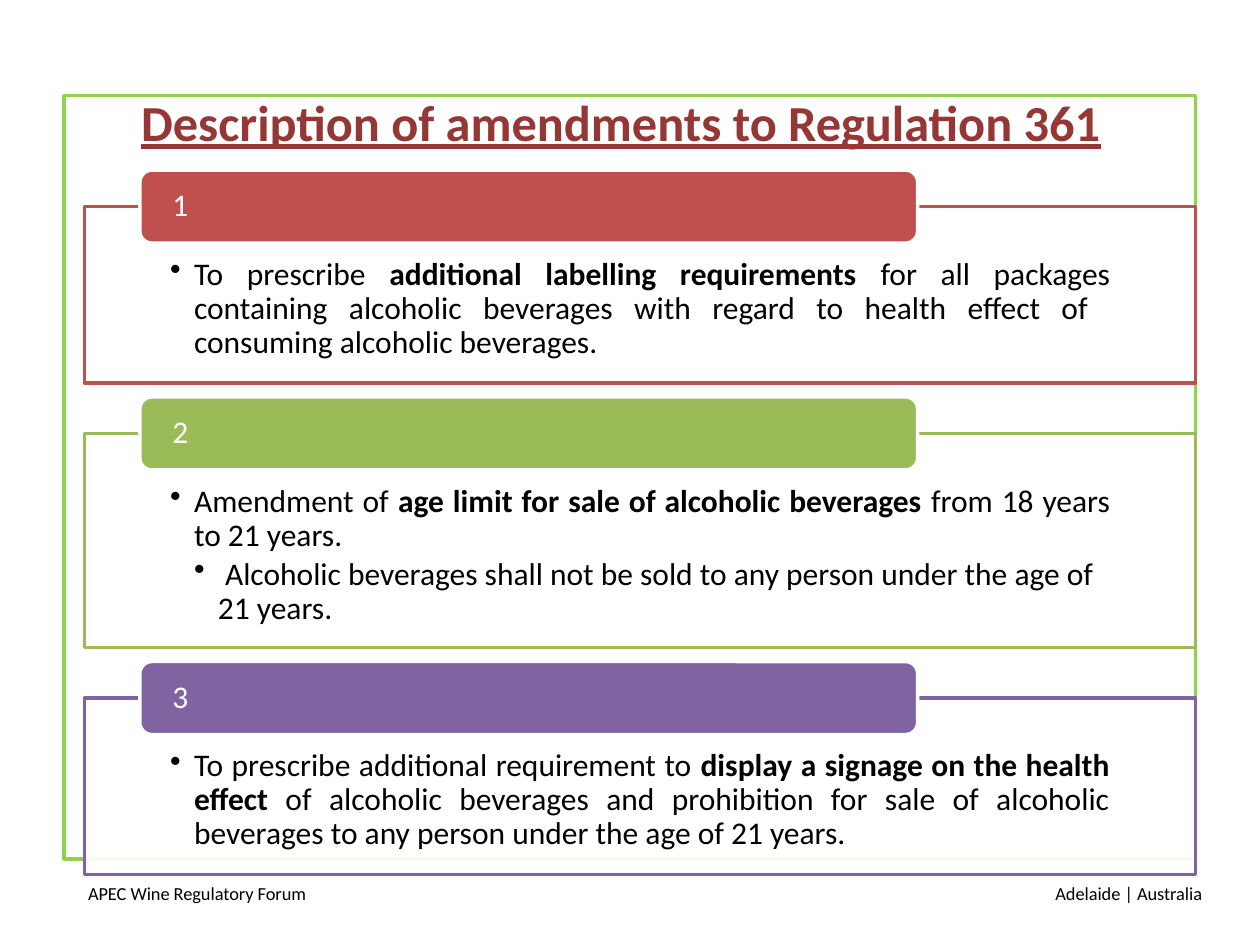
from lxml import etree
from pptx import Presentation
from pptx.dml.color import RGBColor
from pptx.enum.shapes import MSO_SHAPE
from pptx.enum.text import MSO_ANCHOR, PP_ALIGN
from pptx.oxml.ns import qn
from pptx.util import Inches, Pt

RECT, ROUNDED = MSO_SHAPE.RECTANGLE, MSO_SHAPE.ROUNDED_RECTANGLE
TOP, MIDDLE = MSO_ANCHOR.TOP, MSO_ANCHOR.MIDDLE
LEFT, CENTER, RIGHT = PP_ALIGN.LEFT, PP_ALIGN.CENTER, PP_ALIGN.RIGHT
JUSTIFY = PP_ALIGN.JUSTIFY

FONT = "Calibri"
COLORS = {
    "title": "953735", "frame": "92D050", "text": "000000", "white": "FFFFFF",
    "red": "C0504D", "green": "9BBB59", "purple": "8064A2",
}

# Each amendment: colour, box height, paragraphs of (level, alignment, runs of (text, bold))
AMENDMENTS = [
    ("red", 1.4, [(1, JUSTIFY, [
        ("To prescribe ", False),
        ("additional labelling requirements ", True),
        ("for all packages containing alcoholic beverages with regard to "
         "health effect of  consuming alcoholic beverages.", False)])]),
    ("green", 1.7, [
        (1, JUSTIFY, [
            ("Amendment of ", False),
            ("age limit for sale of alcoholic beverages ", True),
            ("from 18 years to 21 years.", False)]),
        (2, LEFT, [
            (" Alcoholic beverages shall not be sold to any person under "
             "the age of 21 years.", False)])]),
    ("purple", 1.4, [(1, JUSTIFY, [
        ("To prescribe additional requirement to ", False),
        ("display a signage on the health effect", True),
        (" of alcoholic beverages and prohibition for sale of alcoholic "
         "beverages to any person under the age of 21 years.", False)])]),
]


def rgb(name):
    return RGBColor.from_string(COLORS[name])


def set_all(target, values):
    for key, value in values.items():
        setattr(target, key, value)


def add_run(paragraph, text, size, color, **font_values):
    run = paragraph.add_run()
    run.text = text
    set_all(run.font, {"name": FONT, "size": Pt(size), **font_values})
    run.font.color.rgb = rgb(color)


def add_bullet(paragraph, level, hang=0.19):
    properties = paragraph._p.get_or_add_pPr()
    properties.set("marL", str(Inches(hang * level)))
    properties.set("indent", str(-Inches(hang)))
    etree.SubElement(properties, qn("a:buChar")).set("char", "•")


def add_panel(slide, kind, box, line, fill=None, alpha=None):
    panel = slide.shapes.add_shape(kind, *map(Inches, box))
    panel.shadow.inherit = False
    panel.line.color.rgb = rgb(line)
    panel.line.width = Pt(2)
    if fill is None:
        panel.fill.background()
    else:
        panel.fill.solid()
        panel.fill.fore_color.rgb = rgb(fill)
    if alpha is not None:
        color = panel.fill._xPr.find(qn("a:solidFill"))[0]
        etree.SubElement(color, qn("a:alpha")).set("val", str(alpha * 1000))
    return panel


def set_frame(frame, anchor, margins):
    sides = ("margin_left", "margin_top", "margin_right", "margin_bottom")
    set_all(frame, {"word_wrap": True, "vertical_anchor": anchor,
                    **dict(zip(sides, map(Inches, margins)))})


def add_title(slide, box, text):
    title = slide.shapes.title
    set_all(title, dict(zip(("left", "top", "width", "height"), map(Inches, box))))
    set_frame(title.text_frame, MIDDLE, (0.1, 0.05, 0.1, 0.05))
    paragraph = title.text_frame.paragraphs[0]
    paragraph.alignment = CENTER
    add_run(paragraph, text, 28.8, "title", bold=True, underline=True)


def add_footer(slide, box, text, alignment):
    footer = slide.shapes.add_textbox(*map(Inches, box)).text_frame
    set_frame(footer, TOP, (0.1, 0.05, 0.1, 0.05))
    footer.paragraphs[0].alignment = alignment
    add_run(footer.paragraphs[0], text, 10.5, "text")


def add_amendment(slide, box, number, color, paragraphs):
    left, top, width, height = box

    # Outlined body with the bulleted description
    body = add_panel(slide, RECT, box, color, "white", alpha=90).text_frame
    set_frame(body, TOP, (0.68, 0.41, 0.68, 0.14))
    for index, (level, alignment, runs) in enumerate(paragraphs):
        paragraph = body.add_paragraph() if index else body.paragraphs[0]
        add_bullet(paragraph, level)
        set_all(paragraph, {"alignment": alignment, "level": level,
                            "line_spacing": 0.9, "space_after": Pt(2.7)})
        for text, bold in runs:
            add_run(paragraph, text, 18, "text", bold=bold)

    # Numbered tab centred on the body's top edge
    tab_height = 0.58
    tab_box = (left + 0.44, top - tab_height / 2, width * 0.7, tab_height)
    tab = add_panel(slide, ROUNDED, tab_box, "white", color).text_frame
    set_frame(tab, MIDDLE, (0.23, 0, 0.23, 0))
    set_all(tab.paragraphs[0], {"alignment": LEFT, "line_spacing": 0.9})
    add_run(tab.paragraphs[0], str(number), 18, "white")


def add_amendments(slide, left, top, width, gap):
    for number, (color, height, paragraphs) in enumerate(AMENDMENTS, 1):
        add_amendment(slide, (left, top, width, height), number, color, paragraphs)
        top += height + gap


def main():
    presentation = Presentation()
    presentation.slide_width, presentation.slide_height = Inches(10), Inches(7.5)
    title_only = presentation.slide_layouts[5]
    slide = presentation.slides.add_slide(title_only)

    # Page frame and footers
    add_footer(slide, (0.6, 6.95, 2.35, 0.4), "APEC Wine Regulatory Forum", LEFT)
    add_panel(slide, RECT, (0.51, 0.76, 8.98, 6.06), "frame")
    add_footer(slide, (7.29, 6.95, 2.35, 0.4), "Adelaide | Australia", RIGHT)

    # Title and list of amendments
    add_title(slide, (0.43, 0.68, 9, 0.57), "Description of amendments to Regulation 361")
    add_amendments(slide, left=0.67, top=1.64, width=8.82, gap=0.4)

    presentation.save("out.pptx")


if __name__ == "__main__":
    main()
